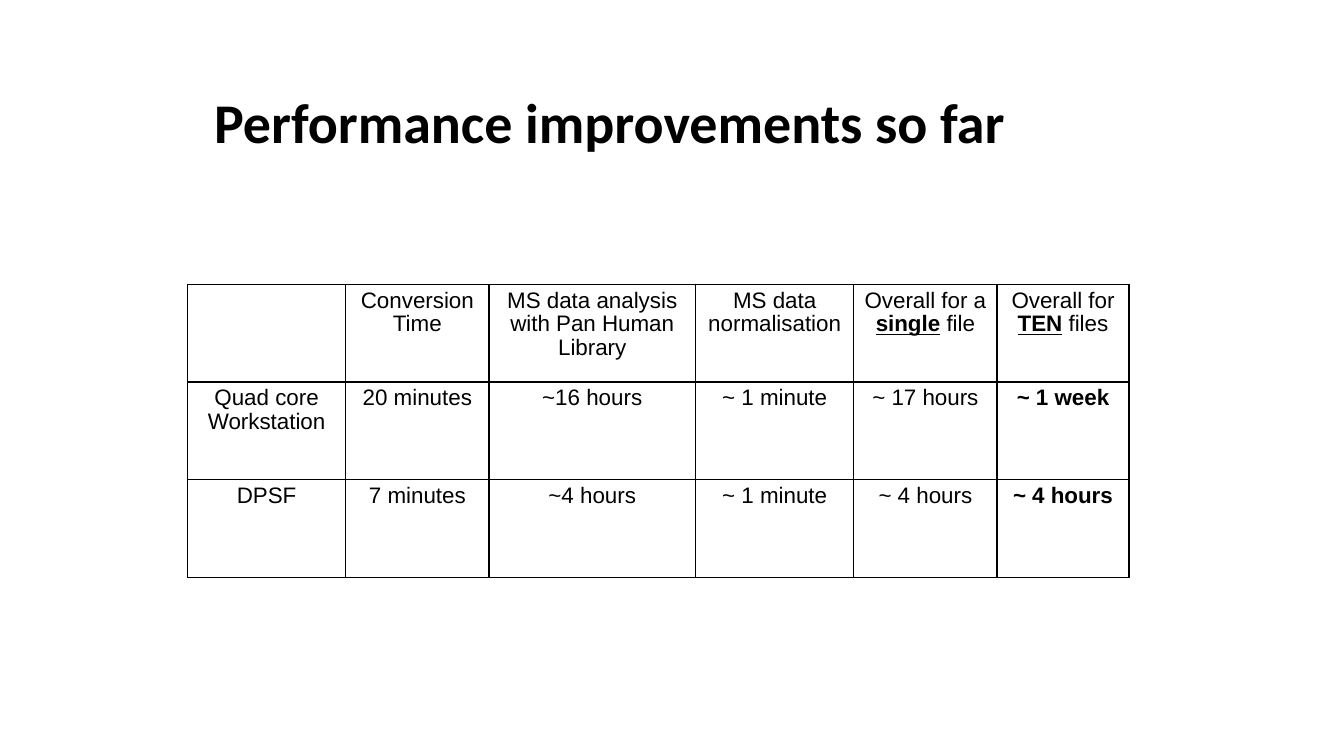
"""Build a slide with a table of performance improvements."""
from lxml import etree
from pptx import Presentation
from pptx.dml.color import RGBColor
from pptx.enum import text as txt
from pptx.oxml import ns
from pptx.util import Inches, Pt

HUES = {"ink": "000000"}
COLS = [1.57, 1.42, 2.05, 1.57, 1.42, 1.31]
HIGH = 0.97
ROWS = [
    ["", "Conversion Time", "MS data analysis with Pan Human Library",
     "MS data normalisation", "Overall for a |single| file",
     "Overall for |TEN| files"],
    ["Quad core Workstation", "20 minutes", "~16 hours", "~ 1 minute",
     "~ 17 hours", "~ 1 week"],
    ["DPSF", "7 minutes", "~4 hours", "~ 1 minute", "~ 4 hours", "~ 4 hours"],
]


def write(frame, words, size=16, font="Arial", bold=False, space=None):
    """Write centred words, with the part between bars bold and underlined."""
    para = frame.paragraphs[0]
    para.alignment = txt.PP_ALIGN.CENTER
    para.line_spacing = space
    for i, part in enumerate(words.split("|")):
        run = para.add_run()
        run.text = part
        run.font.size = Pt(size)
        run.font.name = font
        run.font.bold = bold or i == 1
        run.font.underline = i == 1
        run.font.color.rgb = RGBColor.from_string(HUES["ink"])


def edge(cell):
    """Draw a thin line on all four sides of a cell."""
    props = cell._tc.get_or_add_tcPr()
    for i, side in enumerate(["lnL", "lnR", "lnT", "lnB"]):
        line = etree.Element(ns.qn("a:" + side), w=str(Pt(1)))
        fill = etree.SubElement(line, ns.qn("a:solidFill"))
        etree.SubElement(fill, ns.qn("a:srgbClr"), val=HUES["ink"])
        props.insert(i, line)


deck = Presentation()
deck.slide_width = Inches(13.33)
deck.slide_height = Inches(7.5)
slide = deck.slides.add_slide(deck.slide_layouts[5])

title = slide.shapes.title
title.left, title.top = Inches(1.86), Inches(0.58)
title.width, title.height = Inches(8.37), Inches(1.25)
frame = title.text_frame
frame.margin_left = frame.margin_right = 0
frame.margin_top = frame.margin_bottom = 0
frame.vertical_anchor = txt.MSO_ANCHOR.MIDDLE
frame.auto_size = txt.MSO_AUTO_SIZE.NONE
write(frame, "Performance improvements so far", size=40, font="Calibri",
      bold=True)

grid = slide.shapes.add_table(
    len(ROWS), len(COLS), Inches(1.86), Inches(2.82),
    Inches(sum(COLS)), Inches(HIGH * len(ROWS))).table
for col, width in zip(grid.columns, COLS):
    col.width = Inches(width)
for r, row in enumerate(ROWS):
    grid.rows[r].height = Inches(HIGH)
    for c, words in enumerate(row):
        cell = grid.cell(r, c)
        cell.margin_left = cell.margin_right = Inches(0.09)
        cell.margin_top = cell.margin_bottom = Inches(0.05)
        cell.fill.background()
        edge(cell)
        if words:
            last = r > 0 and c == len(COLS) - 1
            write(cell.text_frame, words, bold=last, space=0.95)

deck.save("out.pptx")
